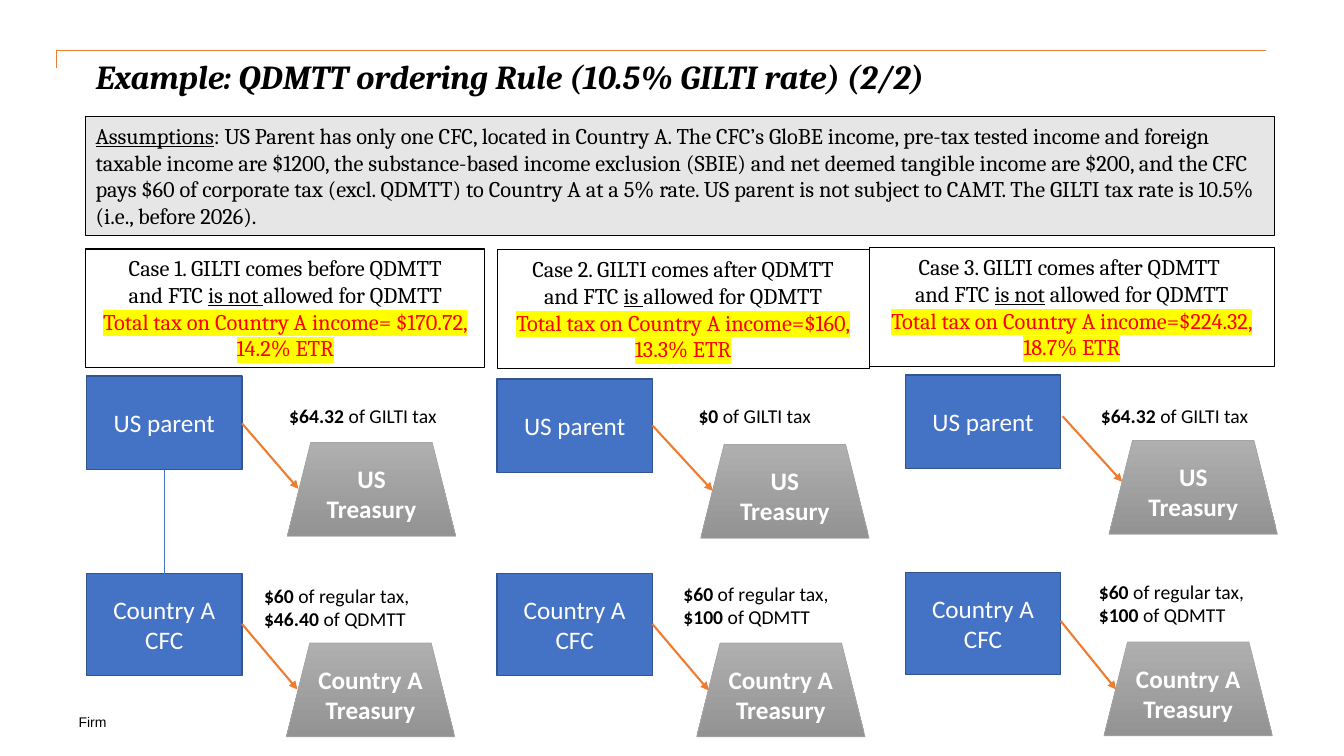
import pptx
import pptx.util
import pptx.oxml
import pptx.oxml.ns
import pptx.dml.color
import pptx.enum.shapes
import pptx.enum.text

Inches, Pt = pptx.util.Inches, pptx.util.Pt
SHAPE = pptx.enum.shapes.MSO_SHAPE
ALIGN = pptx.enum.text.PP_ALIGN
ANCHOR = pptx.enum.text.MSO_ANCHOR

HUES = {
    "black": "000000", "white": "FFFFFF", "red": "FF0000", "yellow": "FFFF00",
    "blue": "4472C4", "navy": "325491", "pale": "E7E6E6", "orange": "ED7D31",
    "gray": "A5A5A5", "light": "AFAFAF", "dark": "939393",
}
TITLE = "Example: QDMTT ordering Rule (10.5% GILTI rate) (2/2)"
FACTS = [[
    ("Assumptions", "u"),
    (": US Parent has only one CFC, located in Country A. The CFC’s GloBE income, "
     "pre-tax tested income and foreign taxable income are $1200, the substance-based "
     "income exclusion (SBIE) and net deemed tangible income are $200, and the CFC pays "
     "$60 of corporate tax (excl. QDMTT) to Country A at a 5% rate. US parent is not "
     "subject to CAMT. The GILTI tax rate is 10.5% (i.e., before 2026).", ""),
]]
PARENT, FUND = [[("US parent", "")]], [[("US Treasury", "b")]]
UNIT = [[("Country A CFC", "")]]
STATE = [[("Country A", "b")], [("Treasury", "b")]]
FIRM = [[("Firm", "")]]

CASES = [
    {
        "head": [[("Case 1. GILTI comes before QDMTT", "")],
                 [("and FTC ", ""), ("is not ", "u"), ("allowed for QDMTT\n", ""),
                  ("Total tax on Country A income= $170.72, 14.2% ETR", "h")]],
        "box": (0.85, 2.47, 3.96), "left": 0.86, "tops": (3.73, 5.69),
        "funds": ((2.85, 4.39), (2.84, 6.38)),
        "arrows": ((2.4, 4.2, 2.96, 4.85), (2.4, 6.19, 2.95, 6.84)),
        "gilti": "$64.32 ", "top-up": "$46.40 ",
        "notes": ((2.77, 3.96, 1.73, 0.34), (2.52, 5.74, 2.29, 0.57)),
    },
    {
        "head": [[("Case 2. GILTI comes after QDMTT\nand FTC ", ""), ("is ", "u"),
                  ("allowed for QDMTT\n", ""),
                  ("Total tax on Country A income=$160, 13.3% ETR", "h")]],
        "box": (4.93, 2.48, 3.69), "left": 4.93, "tops": (3.76, 5.69),
        "funds": ((6.95, 4.41), (6.91, 6.38)),
        "arrows": ((6.47, 4.22, 7.07, 4.87), (6.47, 6.19, 7.03, 6.85)),
        "gilti": "$0 ", "top-up": "$100 ",
        "notes": ((6.83, 3.96, 1.73, 0.34), (6.68, 5.72, 2.2, 0.57)),
    },
    {
        "head": [[("Case 3. GILTI comes after QDMTT \nand FTC ", ""), ("is not", "u"),
                  (" allowed for QDMTT", "")],
                 [("Total tax on Country A income=$224.32, 18.7% ETR", "h")]],
        "box": (8.62, 2.46, 4.02), "left": 8.98, "tops": (3.72, 5.68),
        "funds": ((11, 4.37), (10.95, 6.37)),
        "arrows": ((10.54, 4.13, 11.13, 4.78), (10.52, 6.16, 11.07, 6.84)),
        "gilti": "$64.32 ", "top-up": "$100 ",
        "notes": ((10.82, 3.96, 1.73, 0.34), (10.8, 5.7, 2.21, 0.57)),
    },
]


def tint(name):
    return pptx.dml.color.RGBColor.from_string(HUES[name])


def mark(run):
    run.font.color.rgb = tint("red")
    glow = pptx.oxml.parse_xml(
        f'<a:highlight {pptx.oxml.ns.nsdecls("a")}>'
        f'<a:srgbClr val="{HUES["yellow"]}"/></a:highlight>')
    run.font.fill._xPr.find(pptx.oxml.ns.qn("a:solidFill")).addnext(glow)


def write(shape, lines, face, size, hue="black", align=ALIGN.LEFT, anchor=ANCHOR.TOP):
    frame = shape.text_frame
    frame.word_wrap = True
    frame.vertical_anchor = anchor
    for i, line in enumerate(lines):
        para = frame.add_paragraph() if i else frame.paragraphs[0]
        para.alignment = align
        para.font.name, para.font.size = face, Pt(size)
        para.font.color.rgb = tint(hue)
        for text, style in line:
            for j, part in enumerate(text.split("\n")):
                if j:
                    para.add_line_break()
                if not part:
                    continue
                run = para.add_run()
                run.text = part
                if "b" in style:
                    run.font.bold = True
                if "u" in style:
                    run.font.underline = True
                if "h" in style:
                    mark(run)
    return frame


def block(at, fill, edge, width, kind=SHAPE.RECTANGLE):
    shape = slide.shapes.add_shape(kind, *map(Inches, at))
    shape.shadow.inherit = False
    if fill == "fade":
        shape.fill.gradient()
        shape.fill.gradient_angle = 270
        for stop, hue in zip(shape.fill.gradient_stops, ("light", "dark")):
            stop.color.rgb = tint(hue)
    elif fill:
        shape.fill.solid()
        shape.fill.fore_color.rgb = tint(fill)
    else:
        shape.fill.background()
    shape.line.color.rgb = tint(edge)
    shape.line.width = Pt(width)
    return shape


def link(ends, hue, width, arrow=False):
    line = slide.shapes.add_connector(
        pptx.enum.shapes.MSO_CONNECTOR.STRAIGHT, *map(Inches, ends))
    line.line.color.rgb = tint(hue)
    line.line.width = Pt(width)
    if arrow:
        tip = pptx.oxml.parse_xml(
            f'<a:tailEnd {pptx.oxml.ns.nsdecls("a")} type="triangle"/>')
        line.line._get_or_add_ln().append(tip)
    line._element.spPr.append(pptx.oxml.parse_xml(
        f'<a:effectLst {pptx.oxml.ns.nsdecls("a")}/>'))


def note(at, lines, face="Calibri", size=14):
    return write(slide.shapes.add_textbox(*map(Inches, at)), lines, face, size)


deck = pptx.Presentation()
deck.slide_width, deck.slide_height = Inches(13.33), Inches(7.5)
slide = deck.slides.add_slide(deck.slide_layouts[5])

title = slide.shapes.title
title.left, title.top, title.width, title.height = map(Inches, (0.85, 0.44, 12.41, 0.68))
frame = write(title, [[(TITLE, "")]], "Cambria", 24, anchor=ANCHOR.MIDDLE)
head = frame.paragraphs[0]
head.font.bold = head.font.italic = True
head.line_spacing = 0.9

pen = slide.shapes.build_freeform(Inches(0.56), Inches(0.67), scale=1.0)
pen.add_line_segments([(Inches(0.56), Inches(0.5)), (Inches(12.56), Inches(0.5))], close=False)
rule = pen.convert_to_shape()
rule.shadow.inherit = False
rule.fill.background()
rule.line.color.rgb = tint("orange")
rule.line.width = Pt(0.5)

facts = block((0.85, 1.16, 11.79, 1.18), "pale", "black", 0.75)
write(facts, FACTS, "Cambria", 16).paragraphs[0].space_after = Pt(9)

for case in CASES:
    x, y, w = case["box"]
    write(block((x, y, w, 1.18), None, "black", 0.75), case["head"],
          "Cambria", 16, align=ALIGN.CENTER)
    for top, high, text in zip(case["tops"], (0.93, 1.01), (PARENT, UNIT)):
        write(block((case["left"], top, 1.54, high), "blue", "navy", 1), text,
              "Calibri", 18, "white", ALIGN.CENTER, ANCHOR.MIDDLE)
    for spot, text in zip(case["funds"], (FUND, STATE)):
        write(block((*spot, 1.67, 0.93), "fade", "gray", 0.5, SHAPE.TRAPEZOID), text,
              "Calibri", 18, "white", ALIGN.CENTER, ANCHOR.MIDDLE)
    for ends in case["arrows"]:
        link(ends, "orange", 1.5, True)
    taxes = ([[(case["gilti"], "b"), ("of GILTI tax", "")]],
             [[("$60 ", "b"), ("of regular tax,\n", ""),
               (case["top-up"], "b"), ("of QDMTT", "")]])
    for at, text in zip(case["notes"], taxes):
        note(at, text)

link((1.63, 4.66, 1.63, 5.69), "blue", 0.5)

foot = note((0.78, 7.08, 3.78, 0.17), FIRM, "Arial", 10)
foot.margin_left = foot.margin_right = foot.margin_top = foot.margin_bottom = 0

deck.save("out.pptx")
